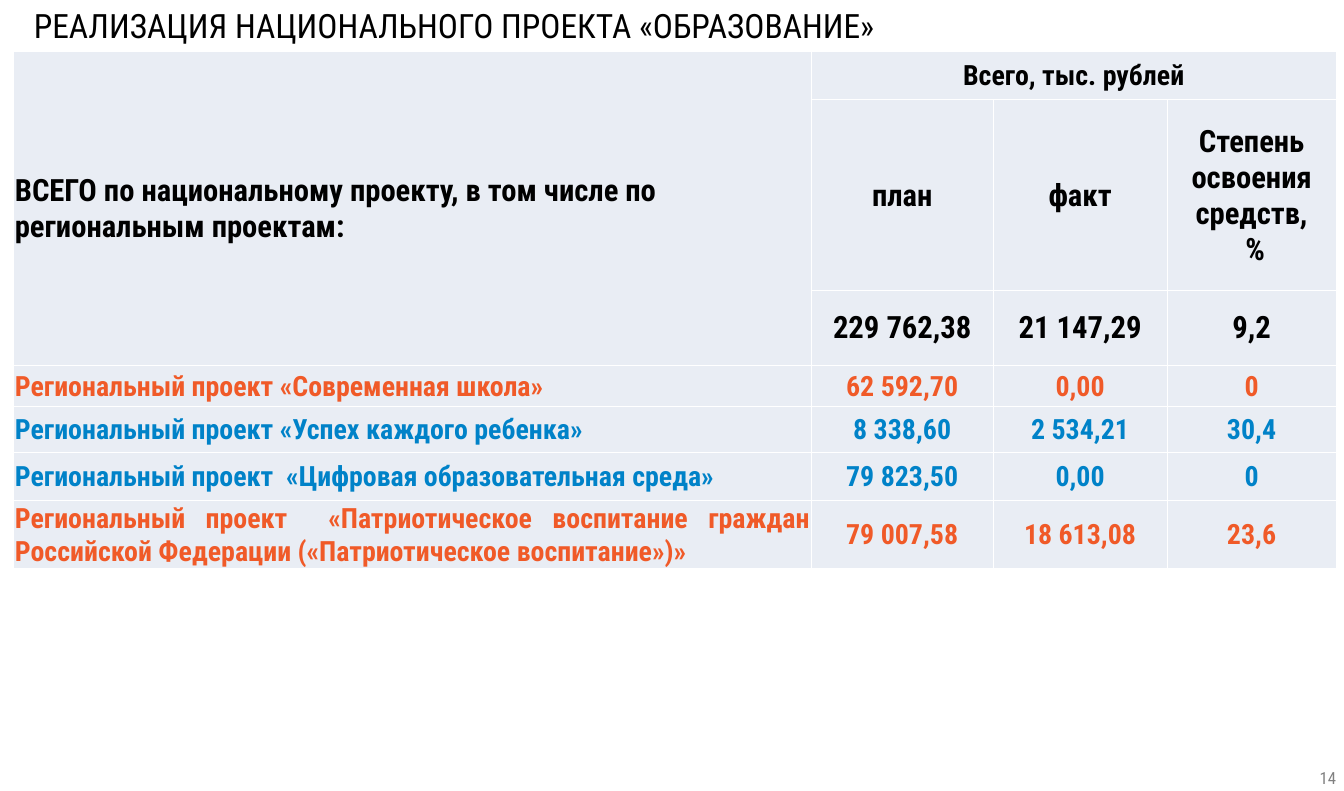
from dataclasses import dataclass

from lxml import etree
from pptx import Presentation
from pptx.dml.color import RGBColor
from pptx.enum import text as t
from pptx.oxml import ns
from pptx import util as u

PX = 9000


@dataclass(frozen=True)
class Theme:
    font: str = "Roboto Condensed"
    black: str = "000000"
    grey: str = "808080"
    orange: str = "F05A28"
    blue: str = "0082C8"
    border: str = "FFFFFF"
    cell: str = "E9EDF4"
    title: int = 24
    heading: int = 22
    body: int = 20
    number: int = 12


THEME = Theme()
LEFT, CENTER = t.PP_ALIGN.LEFT, t.PP_ALIGN.CENTER
RIGHT, JUSTIFY = t.PP_ALIGN.RIGHT, t.PP_ALIGN.JUSTIFY

COLUMN_WIDTHS = [807, 184, 176, 171]
ROW_HEIGHTS = [49, 193, 75, 42, 46, 49, 69]
HEADINGS = [
    ["ВСЕГО по национальному проекту, в том числе по региональным проектам:",
     "Всего, тыс. рублей", "", ""],
    ["", "план", "факт", "Степень освоения средств,\v %"],
    ["", "229 762,38", "21 147,29", "9,2"],
]
PROJECTS = [
    (THEME.orange, ["Региональный проект «Современная школа»", "62 592,70", "0,00", "0"]),
    (THEME.blue, ["Региональный проект «Успех каждого ребенка»", "8 338,60", "2 534,21", "30,4"]),
    (THEME.blue, ["Региональный проект  «Цифровая образовательная среда»",
                  "79 823,50", "0,00", "0"]),
    (THEME.orange, ["Региональный проект  «Патриотическое воспитание граждан Российской "
                    "Федерации («Патриотическое воспитание»)»",
                    "79 007,58", "18 613,08", "23,6"]),
]


def px(*lengths):
    return [length * PX for length in lengths]


def write(frame, words, size, color=THEME.black, bold=False, align=LEFT):
    paragraph = frame.paragraphs[0]
    paragraph.text = words
    paragraph.alignment = align
    for run in paragraph.runs:
        run.font.name = THEME.font
        run.font.size = u.Pt(size)
        run.font.bold = bold
        run.font.color.rgb = RGBColor.from_string(color)


def add_title(slide, words, box):
    title = slide.shapes.title
    title.left, title.top, title.width, title.height = px(*box)
    frame = title.text_frame
    frame.word_wrap = True
    frame.auto_size = t.MSO_AUTO_SIZE.SHAPE_TO_FIT_TEXT
    frame.vertical_anchor = t.MSO_ANCHOR.TOP
    write(frame, words, THEME.title)


def add_page_number(slide, words, box):
    frame = slide.shapes.add_textbox(*px(*box)).text_frame
    frame.word_wrap = True
    frame.vertical_anchor = t.MSO_ANCHOR.MIDDLE
    write(frame, words, THEME.number, color=THEME.grey, align=RIGHT)


def style_cell(cell):
    cell.margin_left, cell.margin_right, cell.margin_top, cell.margin_bottom = px(1, 1, 1, 0)
    cell.vertical_anchor = t.MSO_ANCHOR.MIDDLE
    properties = cell._tc.get_or_add_tcPr()
    for side in ("a:lnL", "a:lnR", "a:lnT", "a:lnB"):
        line = etree.SubElement(properties, ns.qn(side), w="12700")
        fill = etree.SubElement(line, ns.qn("a:solidFill"))
        etree.SubElement(fill, ns.qn("a:srgbClr"), val=THEME.border)
    cell.fill.solid()
    cell.fill.fore_color.rgb = RGBColor.from_string(THEME.cell)


def add_budget_table(slide, left, top):
    box = px(left, top, sum(COLUMN_WIDTHS), sum(ROW_HEIGHTS))
    budget = slide.shapes.add_table(len(ROW_HEIGHTS), len(COLUMN_WIDTHS), *box).table
    budget.first_row = budget.horz_banding = False
    for column, width in zip(budget.columns, px(*COLUMN_WIDTHS)):
        column.width = width
    for row, height in zip(budget.rows, px(*ROW_HEIGHTS)):
        row.height = height
    budget.cell(0, 0).merge(budget.cell(2, 0))
    budget.cell(0, 1).merge(budget.cell(0, 3))
    for cell in budget.iter_cells():
        style_cell(cell)

    rows = [(THEME.black, heading) for heading in HEADINGS] + PROJECTS
    for r, (color, entries) in enumerate(rows):
        is_project = r >= len(HEADINGS)
        for c, entry in enumerate(entries):
            cell = budget.cell(r, c)
            if cell.is_spanned:
                continue
            small = is_project or (r, c) == (0, 1)
            label_align = JUSTIFY if is_project else LEFT
            write(cell.text_frame, entry, THEME.body if small else THEME.heading,
                  color=color, bold=True, align=CENTER if c else label_align)


def main():
    deck = Presentation()
    deck.slide_width, deck.slide_height = px(1360, 800)
    slide = deck.slides.add_slide(deck.slide_layouts[5])
    add_page_number(slide, "14", (1121, 777, 241, 20))
    add_title(slide, "РЕАЛИЗАЦИЯ НАЦИОНАЛЬНОГО ПРОЕКТА «ОБРАЗОВАНИЕ»", (24, 0, 1279, 51))
    add_budget_table(slide, 14, 52)
    deck.save("out.pptx")


if __name__ == "__main__":
    main()
